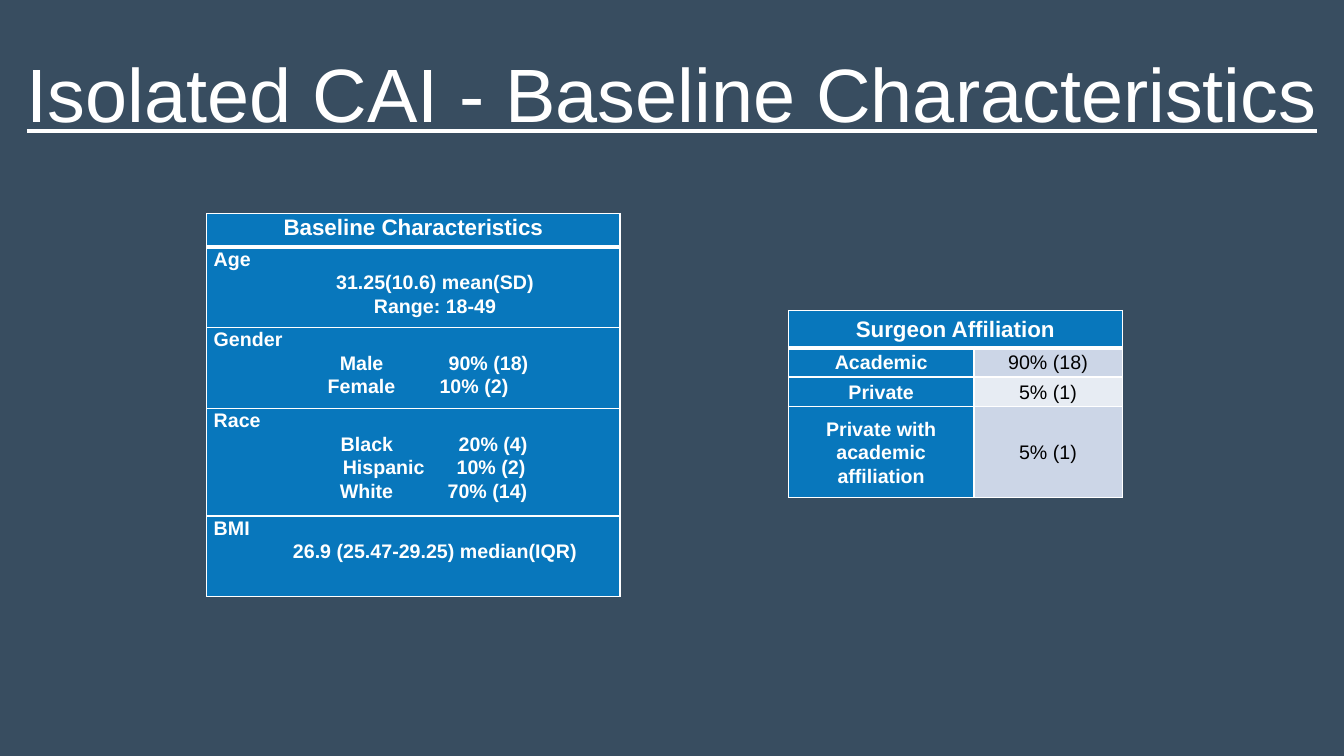
import pptx
import pptx.util
import pptx.dml.color
import pptx.enum.text
import pptx.oxml.ns
import lxml.etree

HUES = {"back": "384D60", "blue": "0877BC", "white": "FFFFFF",
        "black": "000000", "dark": "CCD6E7", "light": "E7ECF3"}
FONT = "Arial"
WIDE, HIGH = 13.33, 7.5
TITLE = "Isolated CAI - Baseline Characteristics"

BASE = {
    "head": "Baseline Characteristics",
    "at": (2.05, 2.12),
    "cols": [4.1],
    "rows": [0.33, 0.8, 0.8, 1.07, 0.8],
}
GROUPS = [
    ("Age", ["31.25(10.6) mean(SD)", "Range: 18-49"]),
    ("Gender", [("Male", 1.25, "90% (18)", 2.33),
                ("Female", 1.13, "10% (2)", 2.24)]),
    ("Race", [("Black", 1.26, "20% (4)", 2.43),
              ("Hispanic", 1.28, "10% (2)", 2.41),
              ("White", 1.25, "70% (14)", 2.32)]),
    ("BMI", ["26.9 (25.47-29.25) median(IQR)"]),
]
STAFF = {
    "head": "Surgeon Affiliation",
    "at": (7.82, 3.08),
    "cols": [1.84, 1.47],
    "rows": [0.37, 0.29, 0.29, 0.91],
}
SHARES = [("Academic", "90% (18)"),
          ("Private", "5% (1)"),
          ("Private with academic affiliation", "5% (1)")]

INCH, PT = pptx.util.Inches, pptx.util.Pt
ALIGN = pptx.enum.text.PP_ALIGN
ANCHOR = pptx.enum.text.MSO_ANCHOR
QN = pptx.oxml.ns.qn


def hue(name):
    return pptx.dml.color.RGBColor.from_string(HUES[name])


def write(para, text, size, ink="white", bold=False):
    run = para.add_run()
    run.text = text
    run.font.name = FONT
    run.font.size = PT(size)
    run.font.bold = bold
    run.font.color.rgb = hue(ink)
    return run


def line(cell, first, align):
    frame = cell.text_frame
    para = frame.paragraphs[0] if first else frame.add_paragraph()
    para.alignment = align
    para.line_spacing = 1.07
    return para


def border(cell, top, base):
    props = cell._tc.get_or_add_tcPr()
    sides = [("L", 1), ("R", 1), ("T", top), ("B", base)]
    for spot, (side, width) in enumerate(sides):
        edge = lxml.etree.Element(QN("a:ln" + side), w=str(PT(width)))
        fill = lxml.etree.SubElement(edge, QN("a:solidFill"))
        lxml.etree.SubElement(fill, QN("a:srgbClr"), val=HUES["white"])
        props.insert(spot, edge)


def style(cell, fill, anchor):
    cell.fill.solid()
    cell.fill.fore_color.rgb = hue(fill)
    cell.vertical_anchor = anchor
    cell.margin_left = cell.margin_right = INCH(0.07)
    cell.margin_top = cell.margin_bottom = 0


def grid(slide, data, anchor):
    cols, rows = data["cols"], data["rows"]
    box = [INCH(n) for n in (*data["at"], sum(cols), sum(rows))]
    table = slide.shapes.add_table(len(rows), len(cols), *box).table
    table.first_row = table.horz_banding = False
    for col, width in zip(table.columns, cols):
        col.width = INCH(width)
    for r, height in enumerate(rows):
        table.rows[r].height = INCH(height)
        for c in range(len(cols)):
            cell = table.cell(r, c)
            shade = "blue" if c == 0 or r == 0 else ("dark" if r % 2 else "light")
            style(cell, shade, anchor)
            border(cell, 3 if r == 1 else 1, 3 if r == 0 else 1)
    head = table.cell(0, 0)
    if len(cols) > 1:
        head.merge(table.cell(0, len(cols) - 1))
    write(line(head, True, ALIGN.CENTER), data["head"], 16, bold=True)
    return table


def detail(cell, item):
    if isinstance(item, str):
        para = line(cell, False, ALIGN.CENTER)
        para._p.get_or_add_pPr().set("marL", str(INCH(0.43)))
        write(para, item, 14, bold=True)
        return
    label, near, value, far = item
    para = line(cell, False, ALIGN.LEFT)
    tabs = lxml.etree.SubElement(para._p.get_or_add_pPr(), QN("a:tabLst"))
    for stop in (near, far):
        lxml.etree.SubElement(tabs, QN("a:tab"), pos=str(INCH(stop)), algn="l")
    write(para, f"\t{label}\t{value}", 14, bold=True)


def main():
    deck = pptx.Presentation()
    deck.slide_width, deck.slide_height = INCH(WIDE), INCH(HIGH)
    slide = deck.slides.add_slide(deck.slide_layouts[5])
    slide.background.fill.solid()
    slide.background.fill.fore_color.rgb = hue("back")

    title = slide.shapes.title
    title.left, title.top = 0, INCH(0.25)
    title.width, title.height = INCH(WIDE), INCH(1.45)
    frame = title.text_frame
    frame.auto_size = pptx.enum.text.MSO_AUTO_SIZE.NONE
    frame.vertical_anchor = ANCHOR.MIDDLE
    para = frame.paragraphs[0]
    para.alignment = ALIGN.CENTER
    para.line_spacing = 0.9
    write(para, TITLE, 54).font.underline = True

    base = grid(slide, BASE, ANCHOR.TOP)
    for r, (name, items) in enumerate(GROUPS, 1):
        cell = base.cell(r, 0)
        write(line(cell, True, ALIGN.LEFT), name, 14, bold=True)
        for item in items:
            detail(cell, item)

    staff = grid(slide, STAFF, ANCHOR.MIDDLE)
    for r, (name, value) in enumerate(SHARES, 1):
        write(line(staff.cell(r, 0), True, ALIGN.CENTER), name, 14, bold=True)
        write(line(staff.cell(r, 1), True, ALIGN.CENTER), value, 14, "black")

    deck.save("out.pptx")


if __name__ == "__main__":
    main()
